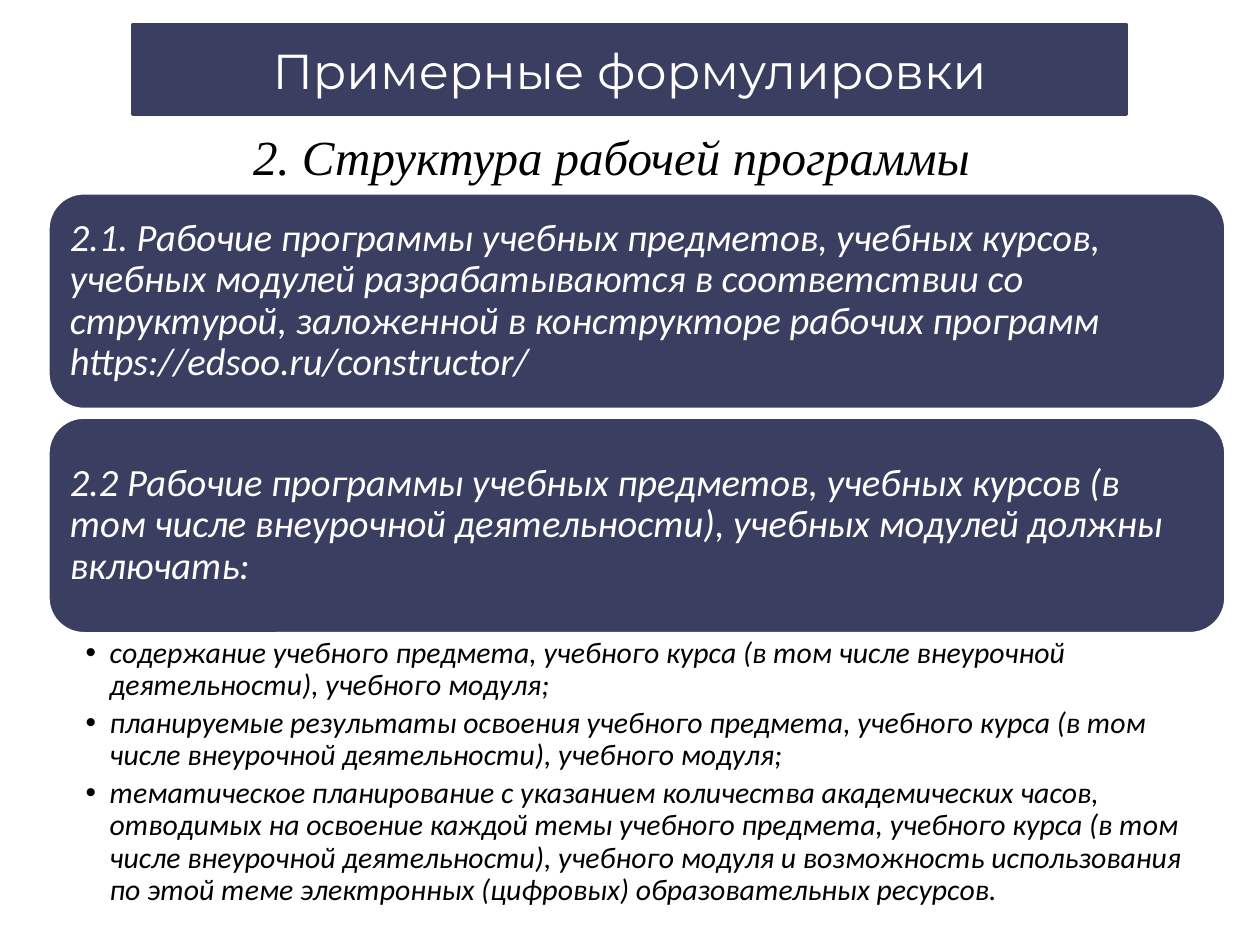
from dataclasses import dataclass

from lxml import etree
from pptx import Presentation
from pptx.dml.color import RGBColor
from pptx.enum.shapes import MSO_SHAPE as Shape
from pptx.enum.text import MSO_ANCHOR as Anchor, MSO_AUTO_SIZE as AutoSize, PP_ALIGN as Align
from pptx.oxml.ns import qn
from pptx.util import Inches, Pt


@dataclass(frozen=True)
class Theme:
    navy: RGBColor = RGBColor(0x3A, 0x3E, 0x61)
    white: RGBColor = RGBColor(0xFF, 0xFF, 0xFF)
    black: RGBColor = RGBColor(0, 0, 0)
    heading_size: int = 28
    card_size: int = 22
    list_size: int = 17
    title_font: str = "Montserrat"
    section_font: str = "Times New Roman"
    text_font: str = "Calibri"


theme = Theme()


def style(paragraph, font_name, size, color, italic=True):
    for run in paragraph.runs:
        run.font.name = font_name
        run.font.size = Pt(size)
        run.font.color.rgb = color
        run.font.italic = italic


def place(shape, left, top, width, height):
    shape.left, shape.top = Inches(left), Inches(top)
    shape.width, shape.height = Inches(width), Inches(height)


deck = Presentation()
deck.slide_width, deck.slide_height = Inches(10), Inches(7.5)
slide = deck.slides.add_slide(deck.slide_layouts[1])

# Title banner: the title placeholder with rounded corners
banner = slide.shapes.title
place(banner, 1.05, 0.2, 7.89, 0.71)
outline = etree.SubElement(banner._element.spPr, qn("a:prstGeom"), prst="roundRect")
etree.SubElement(outline, qn("a:avLst"))
banner.fill.solid()
banner.fill.fore_color.rgb = theme.navy
banner.line.color.rgb = theme.navy
banner.line.width = Pt(2)
banner.text_frame.text = "Примерные формулировки"
banner.text_frame.auto_size = AutoSize.NONE
banner.text_frame.vertical_anchor = Anchor.MIDDLE
banner.text_frame.paragraphs[0].alignment = Align.CENTER
style(banner.text_frame.paragraphs[0], theme.title_font, theme.heading_size, theme.white, italic=False)

# Section heading
section = slide.shapes.add_textbox(Inches(1.91), Inches(0.92), Inches(5.95), Inches(0.61)).text_frame
section.word_wrap = False
section.auto_size = AutoSize.SHAPE_TO_FIT_TEXT
section.text = "2. Структура рабочей программы"
section.paragraphs[0].alignment = Align.JUSTIFY
section.paragraphs[0].line_spacing = 1.07
section.paragraphs[0].space_after = Pt(8)
style(section.paragraphs[0], theme.section_font, theme.heading_size, theme.black)

# Clause cards
clauses = [
    "2.1. Рабочие программы учебных предметов, учебных курсов, учебных модулей "
    "разрабатываются в соответствии со структурой, заложенной в конструкторе "
    "рабочих программ https://edsoo.ru/constructor/",
    "2.2 Рабочие программы учебных предметов, учебных курсов (в том числе "
    "внеурочной деятельности), учебных модулей должны включать:",
]
card_left, card_top, card_width, card_height, card_pitch = 0.38, 1.53, 9.35, 1.72, 1.78
for index, clause in enumerate(clauses):
    card = slide.shapes.add_shape(
        Shape.ROUNDED_RECTANGLE, Inches(card_left), Inches(card_top + index * card_pitch),
        Inches(card_width), Inches(card_height))
    card.shadow.inherit = False
    card.fill.solid()
    card.fill.fore_color.rgb = theme.navy
    card.line.color.rgb = theme.white
    card.line.width = Pt(2)
    frame = card.text_frame
    frame.word_wrap = True
    frame.vertical_anchor = Anchor.MIDDLE
    frame.margin_left = frame.margin_right = frame.margin_top = frame.margin_bottom = Inches(0.09)
    frame.text = clause
    frame.paragraphs[0].alignment = Align.LEFT
    frame.paragraphs[0].line_spacing = 0.9
    style(frame.paragraphs[0], theme.text_font, theme.card_size, theme.white)

# Required contents: bulleted list in the body placeholder
requirements = [
    "содержание учебного предмета, учебного курса (в том числе внеурочной "
    "деятельности), учебного модуля;",
    "планируемые результаты освоения учебного предмета, учебного курса (в том "
    "числе внеурочной деятельности), учебного модуля;",
    "тематическое планирование с указанием количества академических часов, "
    "отводимых на освоение каждой темы учебного предмета, учебного курса (в том "
    "числе внеурочной деятельности), учебного модуля и возможность использования "
    "по этой теме электронных (цифровых) образовательных ресурсов.",
]
contents = slide.placeholders[1]
place(contents, card_left, 5.03, card_width, 2.29)
frame = contents.text_frame
frame.auto_size = AutoSize.NONE
frame.vertical_anchor = Anchor.TOP
frame.margin_left, frame.margin_right = Inches(0.3), Inches(0.17)
frame.margin_top = frame.margin_bottom = Inches(0.03)
frame.text = "\n".join(requirements)
for item in frame.paragraphs:
    item.level = 1
    properties = item._p.get_or_add_pPr()
    properties.set("marL", str(Inches(0.19)))
    properties.set("indent", str(-Inches(0.19)))
    etree.SubElement(properties, qn("a:buChar"), char="•")
    item.line_spacing = 0.9
    item.space_before = Pt(0)
    item.space_after = Pt(theme.list_size * 0.2)
    style(item, theme.text_font, theme.list_size, theme.black)

deck.save("out.pptx")
